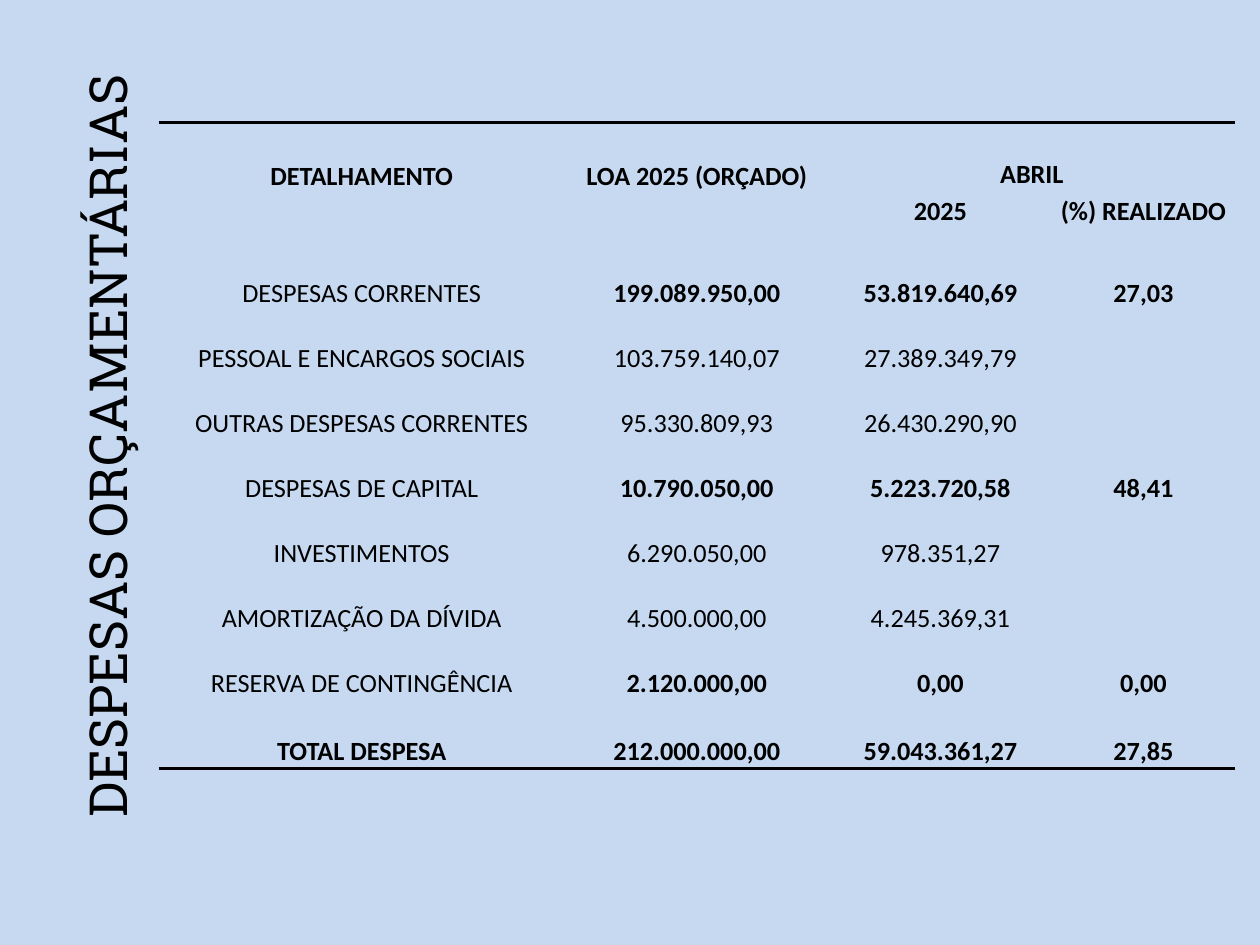
from pptx import Presentation
from pptx.dml.color import RGBColor as Rgb
from pptx.enum.text import MSO_ANCHOR as Anchor, MSO_AUTO_SIZE as Fit, PP_ALIGN as Align
from pptx.oxml import parse_xml
from pptx.oxml.ns import nsdecls, qn
from pptx.util import Pt

COLORS = {"sky": "C6D9F1", "ink": "000000"}
PLAIN_TABLE = "{2D5ABB26-0587-4C30-8999-92F81FD0307C}"
COLUMNS = [232, 151, 127.5, 104.5]
HEIGHTS = [39, 23, 45.4] + [37.15] * 6 + [39]
HEADER_ROWS = 2
ROWS = [
    ["DETALHAMENTO", "LOA 2025 (ORÇADO)", "ABRIL", ""],
    ["", "", "2025", "(%) REALIZADO"],
    ["DESPESAS CORRENTES", "199.089.950,00", "53.819.640,69", "27,03"],
    ["PESSOAL E ENCARGOS SOCIAIS", "103.759.140,07", "27.389.349,79", ""],
    ["OUTRAS DESPESAS CORRENTES", "95.330.809,93", "26.430.290,90", ""],
    ["DESPESAS DE CAPITAL", "10.790.050,00", "5.223.720,58", "48,41"],
    ["INVESTIMENTOS", "6.290.050,00", "978.351,27", ""],
    ["AMORTIZAÇÃO DA DÍVIDA", "4.500.000,00", "4.245.369,31", ""],
    ["RESERVA DE CONTINGÊNCIA", "2.120.000,00", "0,00", "0,00"],
    ["TOTAL DESPESA", "212.000.000,00", "59.043.361,27", "27,85"],
]
MERGES = [((0, 0), (1, 0)), ((0, 1), (1, 1)), ((0, 2), (0, 3)), ((3, 3), (4, 3)), ((6, 3), (7, 3))]


class BudgetPage:
    """Holds the style and the current slide, and draws each kind of element."""

    def __init__(self, page):
        self.page = page
        self.title_font = {"name": "Roboto Slab", "size": Pt(30)}
        self.cell_font = {"name": "Calibri", "size": Pt(15)}
        self.cell_format = {"margin_left": Pt(0.75), "margin_right": Pt(0.75),
                            "margin_top": Pt(0.75), "margin_bottom": 0}

    def apply(self, target, values):
        for name, value in values.items():
            setattr(target, name, value)

    def paint(self, fill, color):
        fill.solid()
        fill.fore_color.rgb = Rgb.from_string(COLORS[color])

    def add_text(self, para, text, font):
        para.alignment = Align.CENTER
        span = para.add_run()
        span.text = text
        self.apply(span.font, font)
        span.font.color.rgb = Rgb.from_string(COLORS["ink"])

    def background(self, color):
        self.paint(self.page.background.fill, color)

    def vertical_title(self, text, left, top, width, height):
        box = self.page.shapes.add_textbox(Pt(left), Pt(top), Pt(width), Pt(height))
        frame = box.text_frame
        self.apply(frame, {"word_wrap": False, "auto_size": Fit.SHAPE_TO_FIT_TEXT})
        frame._txBody.bodyPr.set("vert", "vert270")
        self.add_text(frame.paragraphs[0], text, self.title_font)

    def border(self, cell, side):
        line = parse_xml(
            f'<a:{side} {nsdecls("a")} w="{Pt(2)}"><a:solidFill>'
            f'<a:srgbClr val="{COLORS["ink"]}"/></a:solidFill></a:{side}>')
        cell._tc.get_or_add_tcPr().insert(0, line)

    def fill_cell(self, cell, text, bold, anchor):
        self.apply(cell, {**self.cell_format, "vertical_anchor": anchor})
        self.paint(cell.fill, "sky")
        if text:
            self.add_text(cell.text_frame.paragraphs[0], text, {**self.cell_font, "bold": bold})

    def table(self, left, top):
        frame = self.page.shapes.add_table(len(ROWS), len(COLUMNS), Pt(left), Pt(top),
                                           Pt(sum(COLUMNS)), Pt(sum(HEIGHTS)))
        table = frame.table
        self.apply(table, {"first_row": False, "horz_banding": False})
        table._tbl.tblPr.find(qn("a:tableStyleId")).text = PLAIN_TABLE
        for column, width in zip(table.columns, COLUMNS):
            column.width = Pt(width)
        for row, height in zip(table.rows, HEIGHTS):
            row.height = Pt(height)
        for first, last in MERGES:
            table.cell(*first).merge(table.cell(*last))
        last_row = len(ROWS) - 1
        for r, texts in enumerate(ROWS):
            header = r < HEADER_ROWS
            for c, text in enumerate(texts):
                cell = table.cell(r, c)
                bold = header or r == last_row or (c > 0 and texts[-1] != "")
                middle = header and text != "ABRIL"
                self.fill_cell(cell, text, bold, Anchor.MIDDLE if middle else Anchor.BOTTOM)
                if r == 0:
                    self.border(cell, "lnT")
                if r == last_row:
                    self.border(cell, "lnB")


def main():
    deck = Presentation()
    deck.slide_width, deck.slide_height = Pt(720), Pt(540)
    page = BudgetPage(deck.slides.add_slide(deck.slide_layouts[6]))
    page.background("sky")
    page.vertical_title("DESPESAS ORÇAMENTÁRIAS", 39.6, 45.4, 51, 419)
    page.table(90.7, 69.8)
    deck.save("out.pptx")


if __name__ == "__main__":
    main()
